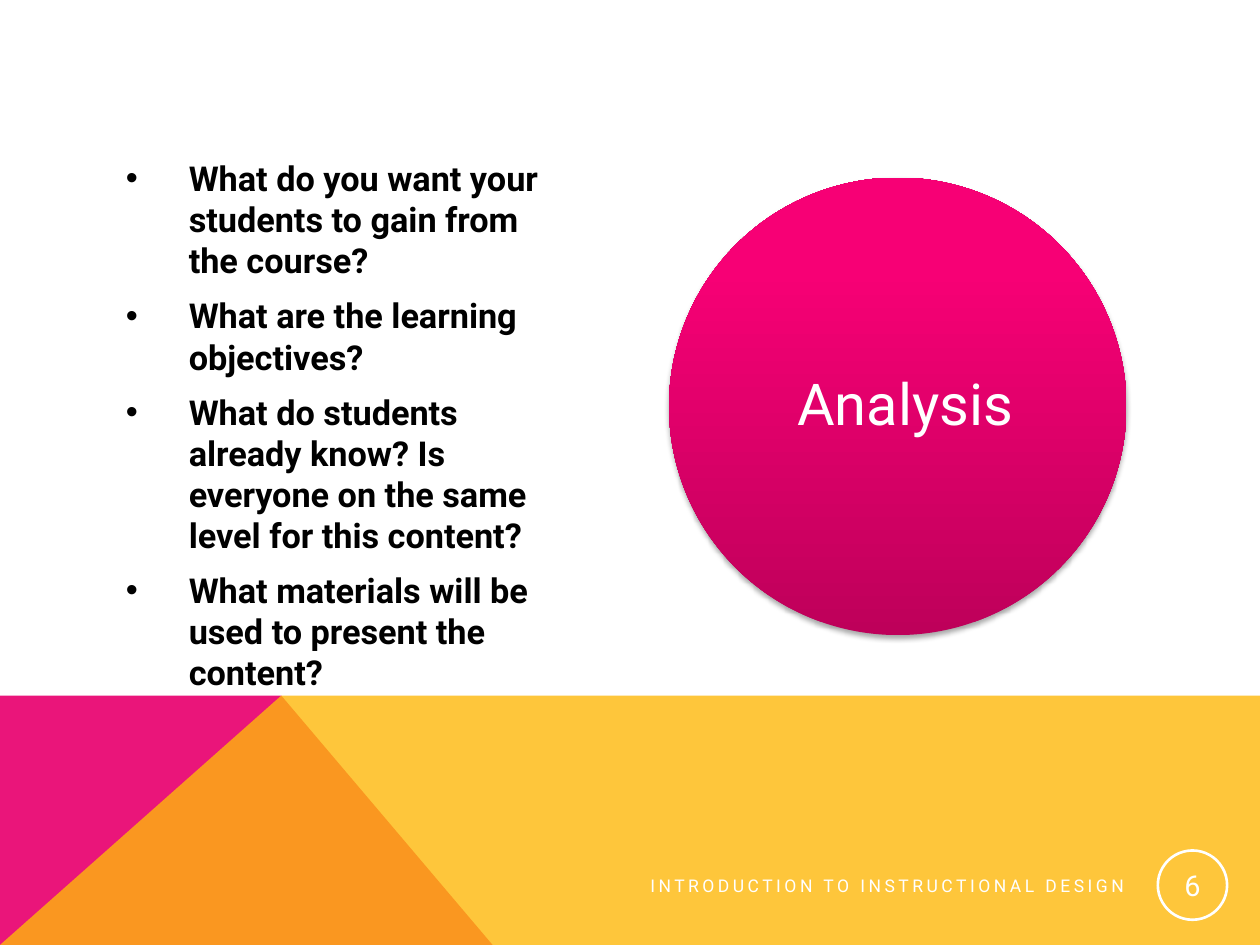
from copy import deepcopy

from lxml import etree
from pptx import Presentation
from pptx.dml.color import RGBColor
from pptx.enum.shapes import MSO_SHAPE
from pptx.enum.text import MSO_ANCHOR, PP_ALIGN
from pptx.oxml.ns import qn
from pptx.util import Pt

OVAL = MSO_SHAPE.OVAL
TOP, MIDDLE = MSO_ANCHOR.TOP, MSO_ANCHOR.MIDDLE
LEFT, CENTER, RIGHT = PP_ALIGN.LEFT, PP_ALIGN.CENTER, PP_ALIGN.RIGHT

BLACK = RGBColor(0x00, 0x00, 0x00)
WHITE = RGBColor(0xFF, 0xFF, 0xFF)
PINK = RGBColor(0xEA, 0x15, 0x7A)
YELLOW = RGBColor(0xFE, 0xB8, 0x0A)
CIRCLE_STOPS = [
    (0, RGBColor(0xBE, 0x00, 0x5A)),
    (0.8, RGBColor(0xF7, 0x00, 0x75)),
    (1, RGBColor(0xF8, 0x00, 0x76)),
]

FONT = "Roboto"
PAGE_WIDTH, PAGE_HEIGHT = 720, 540
QUESTIONS = [
    "What do you want your students to gain from the course?",
    "What are the learning objectives?",
    "What do students already know? Is everyone on the same level for this content?",
    "What materials will be used to present the content?",
]


def add_child(parent, tag, **attributes):
    """Append a DrawingML element with the given attributes."""
    child = etree.SubElement(parent, qn(tag))
    for name, value in attributes.items():
        child.set(name, str(value))
    return child


def set_frame(frame, anchor, inset=None):
    """Make a text frame wrap, anchor its text and set equal insets."""
    frame.word_wrap = True
    frame.vertical_anchor = anchor
    if inset is not None:
        frame.margin_left = frame.margin_right = Pt(inset)
        frame.margin_top = frame.margin_bottom = Pt(inset)


def add_span(para, text, size, color, align, bold=False):
    """Add one run of styled text to an aligned paragraph."""
    para.alignment = align
    span = para.add_run()
    span.text = text
    span.font.name = FONT
    span.font.size = Pt(size)
    span.font.bold = bold
    span.font.color.rgb = color
    return span


def add_polygon(page, points, color):
    """Draw a closed, filled outline without a border."""
    corners = [(Pt(x), Pt(y)) for x, y in points]
    builder = page.shapes.build_freeform(*corners[0])
    builder.add_line_segments(corners[1:], close=True)
    polygon = builder.convert_to_shape()
    polygon.shadow.inherit = False
    polygon.fill.solid()
    polygon.fill.fore_color.rgb = color
    polygon.line.fill.background()
    return polygon


def add_band(page, left, top, width, height):
    """Place the pink wedge and the translucent yellow band over it."""
    right, bottom = left + width, top + height
    peak = (left + 160.75, top)
    add_polygon(page, [(left, bottom), (left, top), peak, (left + 281.5, bottom)], PINK)
    yellow = add_polygon(page, [(left, bottom), peak, (right, top), (right, bottom)], YELLOW)
    fill_color = yellow._element.spPr.find(qn("a:solidFill"))[0]
    add_child(fill_color, "a:alpha", val=80000)


def add_questions(page, left, top, width, height):
    """Place the bulleted list of questions."""
    box = page.shapes.add_textbox(Pt(left), Pt(top), Pt(width), Pt(height))
    frame = box.text_frame
    set_frame(frame, TOP)
    for index, question in enumerate(QUESTIONS):
        para = frame.add_paragraph() if index else frame.paragraphs[0]
        properties = para._p.get_or_add_pPr()
        properties.set("marL", str(Pt(36)))
        properties.set("indent", str(-Pt(36)))
        add_child(properties, "a:buFont", typeface="Arial")
        add_child(properties, "a:buChar", char="•")
        if index:
            para.space_before = Pt(8)
        add_span(para, question, 19.6, BLACK, LEFT, bold=True)


def add_footer(page, left, top, width, height):
    """Place the letter-spaced course title and the ringed page number."""
    ring_size = height
    title_height = 21.6
    title = page.shapes.add_textbox(
        Pt(left), Pt(top + (height - title_height) / 2), Pt(372.25), Pt(title_height))
    set_frame(title.text_frame, MIDDLE)
    span = add_span(title.text_frame.paragraphs[0],
                    "INTRODUCTION TO INSTRUCTIONAL DESIGN", 10, WHITE, RIGHT)
    span.font._element.set("spc", "200")

    ring = page.shapes.add_shape(
        OVAL, Pt(left + width - ring_size), Pt(top), Pt(ring_size), Pt(ring_size))
    ring.shadow.inherit = False
    ring.fill.background()
    ring.line.color.rgb = WHITE
    ring.line.width = Pt(1.5)
    set_frame(ring.text_frame, MIDDLE, 0.72)
    add_span(ring.text_frame.paragraphs[0], "6", 16.5, WHITE, CENTER)


def add_topic(page, left, top, size):
    """Place the shaded circle and its topic label."""
    circle = page.shapes.add_shape(OVAL, Pt(left), Pt(top), Pt(size), Pt(size))
    circle.line.fill.background()
    circle.fill.gradient()
    circle.fill.gradient_angle = 90
    properties = circle._element.spPr
    stop_list = properties.find(qn("a:gradFill")).find(qn("a:gsLst"))
    stop_list.append(deepcopy(stop_list[-1]))
    for stop, (position, color) in zip(circle.fill.gradient_stops, CIRCLE_STOPS):
        stop.position = position
        stop.color.rgb = color

    circle.shadow.inherit = False
    effects = properties.find(qn("a:effectLst"))
    shadow = add_child(effects, "a:outerShdw", blurRad=Pt(3.1), dist=Pt(1.8),
                       dir=5400000, rotWithShape=0)
    shadow_color = add_child(shadow, "a:srgbClr", val=BLACK)
    add_child(shadow_color, "a:alpha", val=35000)

    label = page.shapes.add_textbox(Pt(left + 3.6), Pt(top + 38.2), Pt(262.8), Pt(185))
    set_frame(label.text_frame, MIDDLE, 5)
    para = label.text_frame.paragraphs[0]
    para.line_spacing = 0.9
    add_span(para, "Analysis", 33, WHITE, CENTER)


def main():
    """Build the slide and save it."""
    deck = Presentation()
    deck.slide_width, deck.slide_height = Pt(PAGE_WIDTH), Pt(PAGE_HEIGHT)
    page = deck.slides.add_slide(deck.slide_layouts[6])
    band_top = 397.5
    add_band(page, 0, band_top, PAGE_WIDTH, PAGE_HEIGHT - band_top)
    add_questions(page, 64.8, 86.4, 252, 292.3)
    add_footer(page, 277.2, 486, 424, 39.6)
    add_topic(page, 382.3, 101.5, 261.4)
    deck.save("out.pptx")


if __name__ == "__main__":
    main()
